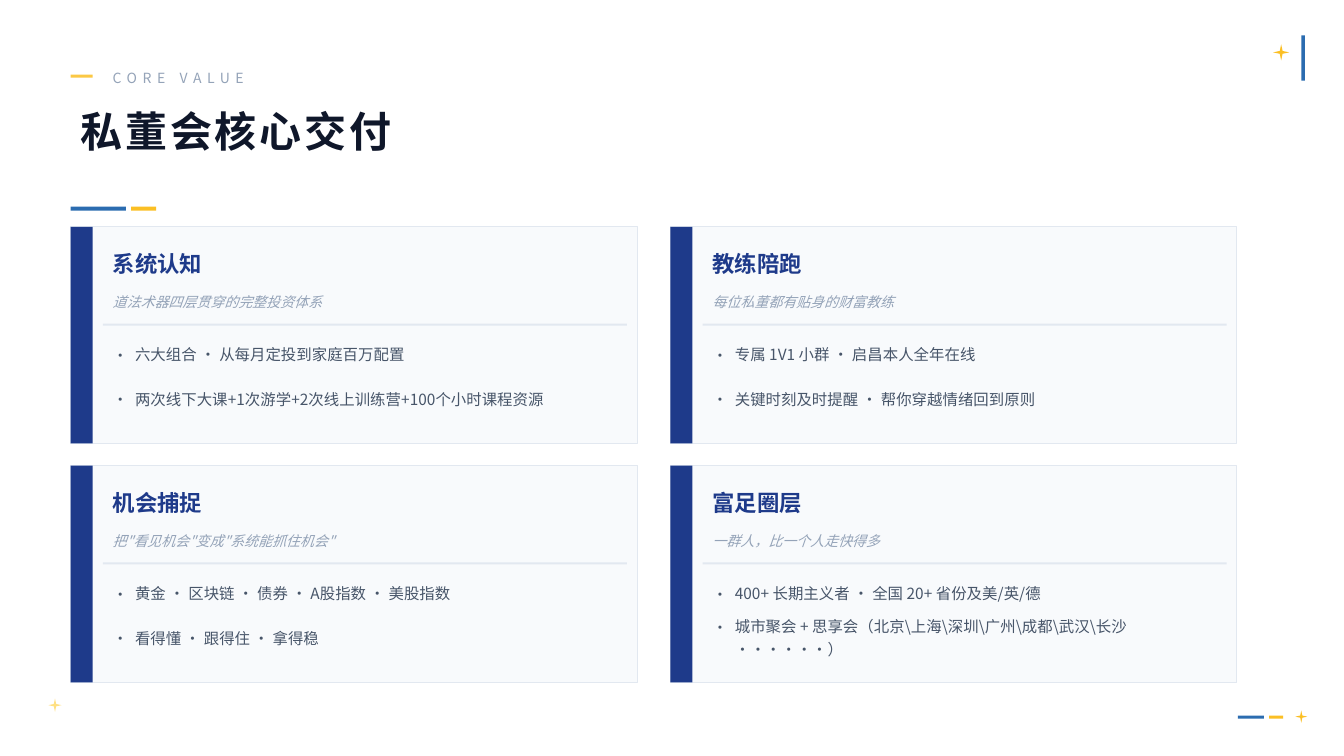
import dataclasses
import itertools

import lxml.etree
import pptx
import pptx.dml.color
import pptx.enum.shapes
import pptx.enum.text
import pptx.oxml.ns
import pptx.util

Pt = pptx.util.Pt
qn = pptx.oxml.ns.qn
SHAPES = pptx.enum.shapes.MSO_SHAPE
ANCHOR = pptx.enum.text.MSO_ANCHOR


@dataclasses.dataclass(frozen=True)
class Theme:
    """Colours, font and text formats shared by the whole slide."""
    font: str = "Noto Sans CJK SC"
    blue: str = "2B6CB0"
    gold: str = "FBBF24"
    pale_gold: str = "FFE082"
    navy: str = "1E3A8A"
    card: str = "F8FAFC"
    border: str = "E2E8F0"
    ink: str = "0F172A"
    muted: str = "94A3B8"
    body: str = "475569"

    def formats(self):
        """Return the colour, spacing and font attributes of each text role."""
        return {
            "label": (self.muted, 4, {"size": Pt(10)}),
            "title": (self.ink, 2, {"size": Pt(30), "bold": True}),
            "heading": (self.navy, 0, {"size": Pt(16), "bold": True}),
            "summary": (self.muted, 0, {"size": Pt(10), "italic": True}),
            "point": (self.body, 0, {"size": Pt(11)}),
        }


THEME = Theme()
FORMATS = THEME.formats()
BULLET_INDENT = Pt(16)

CARDS = [
    ("系统认知", "道法术器四层贯穿的完整投资体系",
     ["六大组合 · 从每月定投到家庭百万配置",
      "两次线下大课+1次游学+2次线上训练营+100个小时课程资源"]),
    ("教练陪跑", "每位私董都有贴身的财富教练",
     ["专属 1V1 小群 · 启昌本人全年在线",
      "关键时刻及时提醒 · 帮你穿越情绪回到原则"]),
    ("机会捕捉", '把"看见机会"变成"系统能抓住机会"',
     ["黄金 · 区块链 · 债券 · A股指数 · 美股指数",
      "看得懂 · 跟得住 · 拿得稳"]),
    ("富足圈层", "一群人，比一个人走快得多",
     ["400+ 长期主义者 · 全国 20+ 省份及美/英/德",
      "城市聚会 + 思享会（北京\\上海\\深圳\\广州\\成都\\武汉\\长沙······）"]),
]


def rgb(colour):
    """Turn a hex string into a colour."""
    return pptx.dml.color.RGBColor.from_string(colour)


def add_block(slide, box, fill, kind=SHAPES.RECTANGLE, border=None, opacity=None):
    """Draw a flat filled shape in the box."""
    block = slide.shapes.add_shape(kind, *map(Pt, box))
    block.shadow.inherit = False
    block.fill.solid()
    block.fill.fore_color.rgb = rgb(fill)
    if border:
        block.line.color.rgb = rgb(border)
        block.line.width = Pt(0.75)
    else:
        block.line.fill.background()
    if opacity:
        colour = block.fill._xPr.find(qn("a:solidFill"))[0]
        lxml.etree.SubElement(colour, qn("a:alpha"), val=str(opacity * 1000))


def write(frame, text, role, anchor=ANCHOR.TOP):
    """Fill a text frame with one line of text in the format of its role."""
    colour, spacing, attributes = FORMATS[role]
    frame.word_wrap = True
    frame.auto_size = pptx.enum.text.MSO_AUTO_SIZE.NONE
    frame.vertical_anchor = anchor
    paragraph = frame.paragraphs[0]
    paragraph.alignment = pptx.enum.text.PP_ALIGN.LEFT
    run = paragraph.add_run()
    run.text = text
    for name, value in {"name": THEME.font, **attributes}.items():
        setattr(run.font, name, value)
    run.font.color.rgb = rgb(colour)
    properties = run.font._element
    if spacing:
        properties.set("spc", str(spacing * 100))
    lxml.etree.SubElement(properties, qn("a:ea"), typeface=THEME.font)
    return paragraph


def add_text(slide, box, text, role, anchor=ANCHOR.TOP):
    """Place a text box and return its paragraph."""
    frame = slide.shapes.add_textbox(*map(Pt, box)).text_frame
    return write(frame, text, role, anchor)


def add_point(slide, box, text):
    """Place one bulleted point."""
    point = add_text(slide, box, text, "point", ANCHOR.MIDDLE)
    point.line_spacing = 1.2
    properties = point._p.get_or_add_pPr()
    properties.set("marL", str(BULLET_INDENT))
    properties.set("indent", str(-BULLET_INDENT))
    lxml.etree.SubElement(properties, qn("a:buFont"), typeface=THEME.font)
    lxml.etree.SubElement(properties, qn("a:buChar"), char="·")


def add_corner_ornaments(slide, width, height):
    """Decorate the corners, measured from the slide edges."""
    add_block(slide, (width - 30.5, 25.2, 2.6, 32.4), THEME.blue)
    add_block(slide, (width - 50.6, 31.7, 11.5, 11.5), THEME.gold, SHAPES.STAR_4_POINT)
    add_block(slide, (width - 75.8, height - 28.8, 18.7, 2.2), THEME.blue)
    add_block(slide, (width - 53.5, height - 28.8, 10.1, 2.2), THEME.gold)
    add_block(slide, (width - 34.8, height - 32.4, 8.6, 8.6), THEME.gold, SHAPES.STAR_4_POINT)
    add_block(slide, (34.6, height - 41, 9.4, 9.4), THEME.pale_gold, SHAPES.STAR_4_POINT)


def add_header(slide, box):
    """Place the label, title and underline in the header box."""
    left, top, width, height = box
    add_block(slide, (left, top + 8.64, 15.84, 2.2), THEME.gold, opacity=85)
    add_text(slide, (left + 23.04, top, 576, 21.6), "CORE VALUE", "label", ANCHOR.MIDDLE)
    title = slide.shapes.title
    place = (left, top + 27.36, width, 72)
    for name, value in zip(("left", "top", "width", "height"), place):
        setattr(title, name, Pt(value))
    write(title.text_frame, "私董会核心交付", "title")
    add_block(slide, (left, top + height - 2.9, 39.6, 2.9), THEME.blue)
    add_block(slide, (left + 43.2, top + height - 2.9, 18, 2.9), THEME.gold)


def add_card(slide, box, heading, summary, points):
    """Place one value card with heading, summary and points."""
    left, top, width, height = box
    inner, inner_width = left + 23.04, width - 30.24
    add_block(slide, box, THEME.card, border=THEME.border)
    add_block(slide, (left, top, 15.84, height), THEME.navy)
    add_text(slide, (inner, top + 12.96, inner_width, 30.24), heading, "heading")
    add_text(slide, (inner, top + 43.2, inner_width, 21.6), summary, "summary", ANCHOR.MIDDLE)
    add_block(slide, (inner, top + 69.12, inner_width, 1.44), THEME.border)
    for row, point in enumerate(points):
        add_point(slide, (inner, top + 76.32 + row * 31.68, inner_width, 27.36), point)


def add_card_grid(slide, box, gaps):
    """Share the box among two rows and two columns of cards."""
    left, top, width, height = box
    card_width, card_height = (width - gaps[0]) / 2, (height - gaps[1]) / 2
    for (row, column), card in zip(itertools.product(range(2), repeat=2), CARDS):
        x = left + column * (card_width + gaps[0])
        y = top + row * (card_height + gaps[1])
        add_card(slide, (x, y, card_width, card_height), *card)


def main():
    """Build and save the slide."""
    deck = pptx.Presentation()
    deck.slide_width, deck.slide_height = Pt(960), Pt(540)
    slide = deck.slides.add_slide(deck.slide_layouts.get_by_name("Title Only"))
    add_corner_ornaments(slide, 960, 540)
    add_header(slide, (50.4, 44.64, 864, 105.86))
    add_card_grid(slide, (50.4, 162, 833.04, 325.44), (23.76, 15.84))
    deck.save("out.pptx")


if __name__ == "__main__":
    main()
